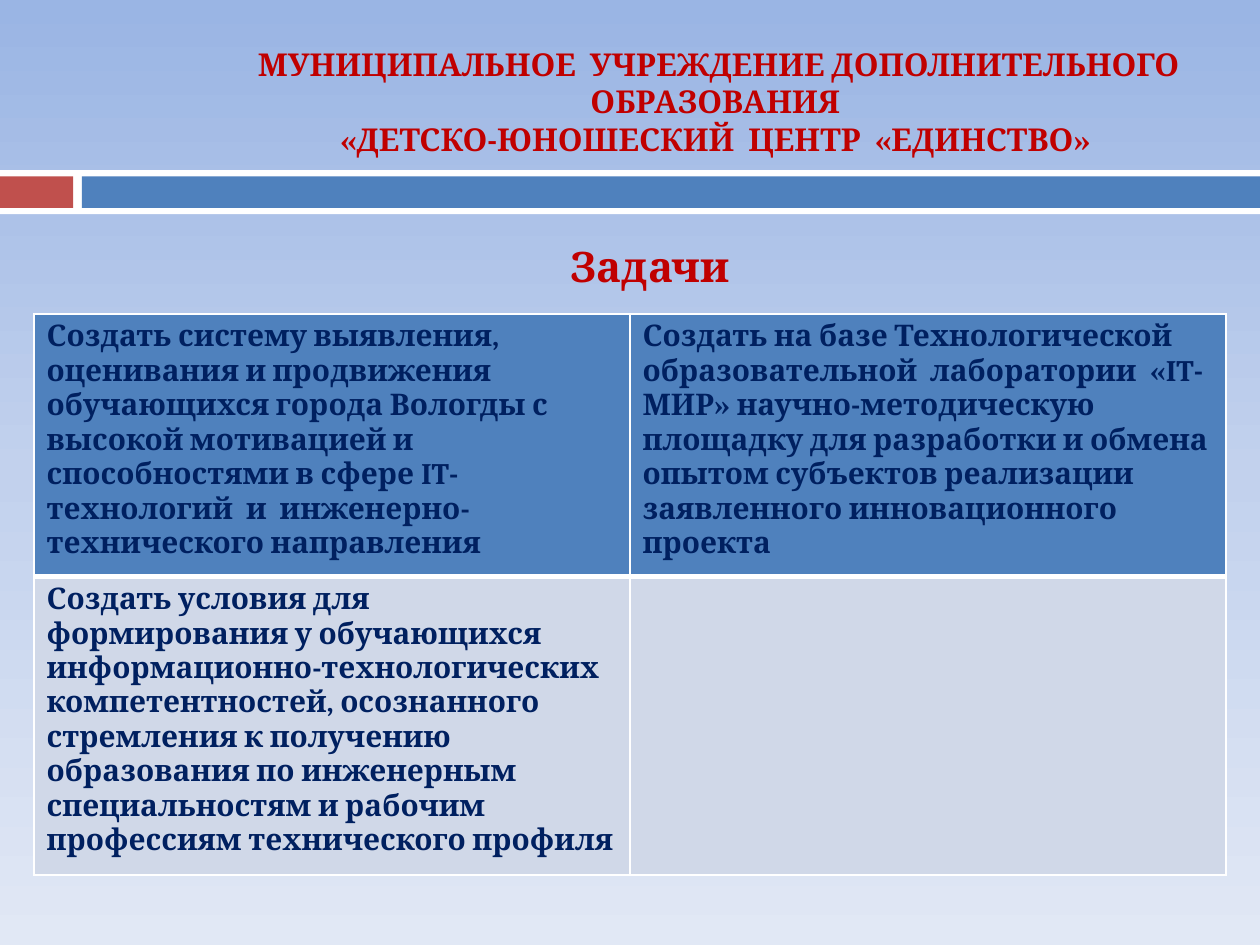
from pptx import Presentation
from pptx.dml.color import RGBColor
from pptx.enum import lang, shapes, text
from pptx.oxml import parse_xml
from pptx.oxml.ns import nsdecls
from pptx.util import Inches, Pt

FONT = "Cambria"
RED, NAVY, BLUE, PALE, WHITE = "C00000", "002060", "4F81BD", "D0D8E8", "FFFFFF"
BACKGROUND = [("9AB5E4", 0), ("C2D1ED", 50), ("E1E8F5", 100)]
BANDS = [
    (0, 1.35, 10, 0.35, WHITE),
    (0, 1.4, 0.58, 0.25, "C0504D"),
    (0.65, 1.4, 9.35, 0.25, BLUE),
]
TITLE = (" МУНИЦИПАЛЬНОЕ  УЧРЕЖДЕНИЕ ДОПОЛНИТЕЛЬНОГО  ОБРАЗОВАНИЯ \v"
         "«ДЕТСКО-ЮНОШЕСКИЙ  ЦЕНТР  «ЕДИНСТВО» ")
HEADING = "Задачи "
LATIN_WORD = "IT"
TASKS = [
    ["Создать систему выявления, оценивания и продвижения обучающихся города "
     "Вологды с высокой мотивацией и способностями в сфере IT-технологий  и  "
     "инженерно-технического направления",
     "Создать на базе Технологической  образовательной  лаборатории  «IT-МИР» "
     "научно-методическую площадку для разработки и обмена опытом субъектов "
     "реализации заявленного инновационного проекта"],
    ["Создать условия для формирования у обучающихся "
     "информационно-технологических компетентностей, осознанного стремления "
     "к получению образования по инженерным специальностям и рабочим "
     "профессиям технического профиля",
     ""],
]
ROW_FILLS = [BLUE, PALE]
ROW_HEIGHTS = [2.08, 2.37]
COLUMN_WIDTH = 4.73


def rgb(value):
    return RGBColor.from_string(value)


def write(frame, content, size, color, align=text.PP_ALIGN.LEFT):
    """Fill a text frame, marking the Latin word as English and the rest as Russian."""
    frame.word_wrap = True
    before, latin, after = content.partition(LATIN_WORD)
    frame.text = before
    paragraph = frame.paragraphs[0]
    paragraph.alignment = align
    paragraph.line_spacing = 1.0
    for piece in filter(None, (latin, after)):
        paragraph.add_run().text = piece
    for part in [paragraph, *paragraph.runs]:
        part.font.name = FONT
        part.font.size = Pt(size)
        part.font.bold = True
        part.font.color.rgb = rgb(color)
    for run in paragraph.runs:
        run.font.language_id = (lang.MSO_LANGUAGE_ID.ENGLISH_US if run.text == LATIN_WORD
                                else lang.MSO_LANGUAGE_ID.RUSSIAN)


def border(cell, **widths):
    """Draw white cell edges, with widths in points by side, in schema order."""
    properties = cell._tc.get_or_add_tcPr()
    for index, side in enumerate("LRTB"):
        properties.insert(index, parse_xml(
            f'<a:ln{side} {nsdecls("a")} w="{Pt(widths.get(side, 1))}"><a:solidFill>'
            f'<a:srgbClr val="{WHITE}"/></a:solidFill></a:ln{side}>'))


def paint_background(slide):
    stops = "".join(f'<a:gs pos="{position * 1000}"><a:srgbClr val="{color}"/></a:gs>'
                    for color, position in BACKGROUND)
    fill = slide.background.fill
    fill.solid()
    properties = slide._element.cSld.bg.bgPr
    properties.replace(properties[0], parse_xml(
        f'<a:gradFill {nsdecls("a")} rotWithShape="1"><a:gsLst>{stops}</a:gsLst>'
        '<a:lin ang="5400000" scaled="0"/></a:gradFill>'))


def add_bands(slide):
    for *box, color in BANDS:
        band = slide.shapes.add_shape(shapes.MSO_SHAPE.RECTANGLE, *map(Inches, box))
        band.shadow.inherit = False
        band.fill.solid()
        band.fill.fore_color.rgb = rgb(color)
        band.line.fill.background()


def add_titles(slide):
    title = slide.shapes.title
    title.left, title.top, title.width, title.height = map(Inches, (1.8, 0.23, 7.81, 1.25))
    title.text_frame.vertical_anchor = text.MSO_ANCHOR.MIDDLE
    title.text_frame.margin_bottom = Inches(0.15)
    write(title.text_frame, TITLE, 18, RED, text.PP_ALIGN.CENTER)
    heading = slide.shapes.add_textbox(*map(Inches, (0.39, 1.86, 9.61, 0.5)))
    write(heading.text_frame, HEADING, 24, RED, text.PP_ALIGN.CENTER)


def add_tasks(slide):
    table = slide.shapes.add_table(
        len(TASKS), len(TASKS[0]), Inches(0.27), Inches(2.49),
        Inches(2 * COLUMN_WIDTH), Inches(sum(ROW_HEIGHTS))).table
    for column in table.columns:
        column.width = Inches(COLUMN_WIDTH)
    for r, row in enumerate(TASKS):
        table.rows[r].height = Inches(ROW_HEIGHTS[r])
        for c, task in enumerate(row):
            cell = table.cell(r, c)
            cell.fill.solid()
            cell.fill.fore_color.rgb = rgb(ROW_FILLS[r])
            write(cell.text_frame, task, 17, NAVY)
            border(cell, **({"B": 3} if r == 0 else {"T": 3}))


def main():
    deck = Presentation()
    deck.slide_width, deck.slide_height = Inches(10), Inches(7.5)
    slide = deck.slides.add_slide(deck.slide_layouts[5])
    paint_background(slide)
    add_bands(slide)
    add_titles(slide)
    add_tasks(slide)
    deck.save("out.pptx")


if __name__ == "__main__":
    main()
